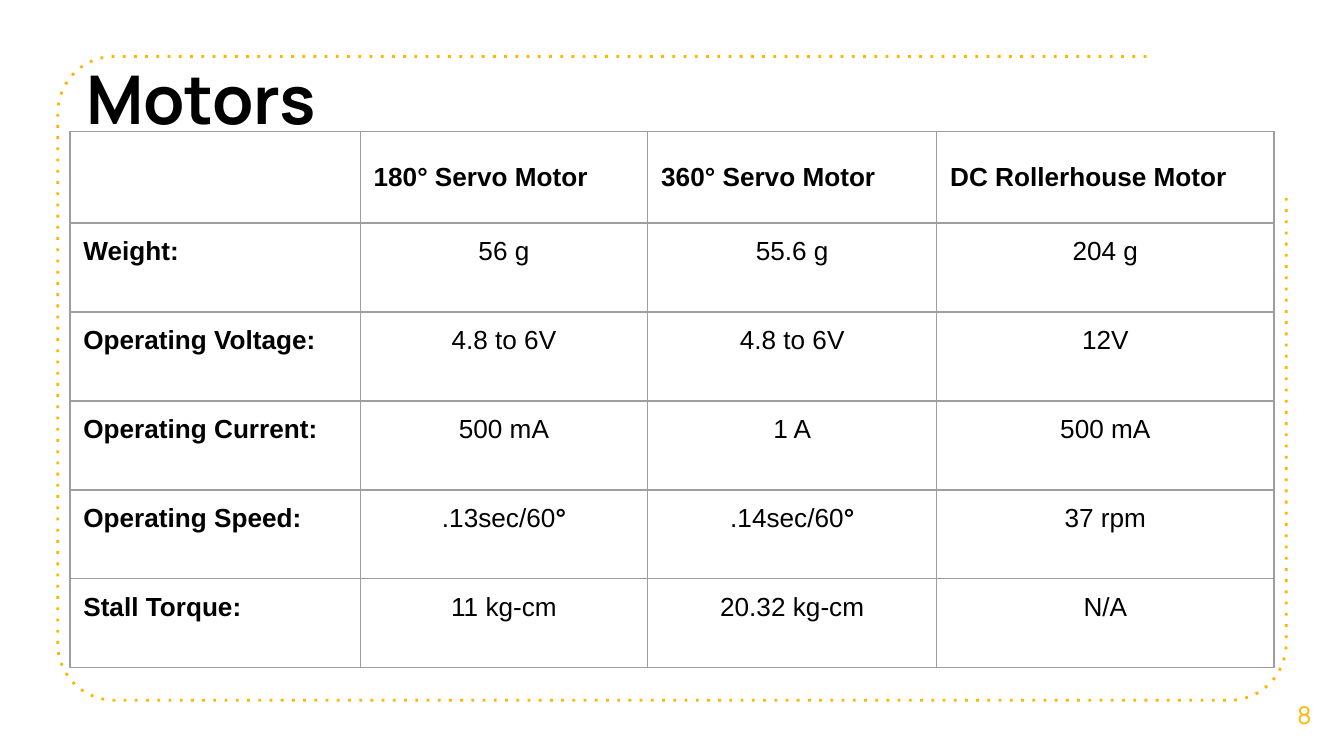
from math import cos, radians, sin

from lxml.etree import SubElement
from pptx import Presentation
from pptx.dml.color import RGBColor
from pptx.enum.text import MSO_ANCHOR, MSO_AUTO_SIZE, PP_ALIGN
from pptx.oxml.ns import qn
from pptx.util import Inches, Pt

BLACK = RGBColor(0x00, 0x00, 0x00)
AMBER = RGBColor(0xFF, 0xB6, 0x00)
GREY = RGBColor(0x9E, 0x9E, 0x9E)

TITLE = "Motors"
PAGE_NUMBER = "8"
ROWS = [
    ("", "180° Servo Motor", "360° Servo Motor", "DC Rollerhouse Motor"),
    ("Weight:", "56 g", "55.6 g", "204 g"),
    ("Operating Voltage:", "4.8 to 6V", "4.8 to 6V", "12V"),
    ("Operating Current:", "500 mA", "1 A", "500 mA"),
    ("Operating Speed:", ".13sec/60°", ".14sec/60°", "37 rpm"),
    ("Stall Torque:", "11 kg-cm", "20.32 kg-cm", "N/A"),
]
COLUMN_WIDTHS = [2.16, 2.14, 2.15, 2.51]
HEADER_HEIGHT, BODY_HEIGHT = 0.68, 3.31
BODY_ROWS = len(ROWS) - 1
ROW_HEIGHTS = [HEADER_HEIGHT] + [BODY_HEIGHT / BODY_ROWS] * BODY_ROWS

FRAME_START, FRAME_END = (8.53, 0.42), (9.57, 1.46)
CORNER_RADIUS = 0.42
CORNERS = [(0.85, 0.84, 270), (0.85, 4.79, 180), (9.15, 4.79, 90)]
CORNER_STEPS = 15


def add_span(para, text, font, size, color, bold=False):
    span = para.add_run()
    span.text = text
    span.font.name = font
    span.font.size = Pt(size)
    span.font.bold = bold
    span.font.color.rgb = color


def set_frame(frame, anchor):
    frame.auto_size = MSO_AUTO_SIZE.NONE
    frame.word_wrap = True
    frame.vertical_anchor = anchor
    frame.margin_left = frame.margin_right = Inches(0.1)
    frame.margin_top = frame.margin_bottom = Inches(0.1)


def add_dotted_frame(page):
    points = []
    for center_x, center_y, start in CORNERS:
        for step in range(CORNER_STEPS + 1):
            angle = radians(start - 90 * step / CORNER_STEPS)
            points.append((center_x + CORNER_RADIUS * cos(angle),
                           center_y + CORNER_RADIUS * sin(angle)))
    points.append(FRAME_END)
    builder = page.shapes.build_freeform(*map(Inches, FRAME_START))
    builder.add_line_segments([(Inches(x), Inches(y)) for x, y in points], close=False)
    outline = builder.convert_to_shape()
    outline.shadow.inherit = False
    outline.fill.background()
    outline.line.color.rgb = AMBER
    outline.line.width = Pt(1.5)
    SubElement(outline.line._get_or_add_ln(), qn("a:prstDash"), val="dot")


def add_title(page):
    title = page.shapes.title
    title.left, title.top = Inches(0.54), Inches(0.33)
    title.width, title.height = Inches(2.03), Inches(0.6)
    set_frame(title.text_frame, MSO_ANCHOR.TOP)
    para = title.text_frame.paragraphs[0]
    para.alignment = PP_ALIGN.LEFT
    add_span(para, TITLE, "Manrope", 36, BLACK, True)


def add_page_number(page):
    box = page.shapes.add_textbox(Inches(9.41), Inches(5.02), Inches(0.59), Inches(0.6))
    set_frame(box.text_frame, MSO_ANCHOR.MIDDLE)
    para = box.text_frame.paragraphs[0]
    para.alignment = PP_ALIGN.CENTER
    add_span(para, PAGE_NUMBER, "Manrope", 13, AMBER)


def add_borders(cell):
    properties = cell._tc.get_or_add_tcPr()
    for side in ("a:lnL", "a:lnR", "a:lnT", "a:lnB"):
        line = SubElement(properties, qn(side), w=str(Pt(0.75)))
        fill = SubElement(line, qn("a:solidFill"))
        SubElement(fill, qn("a:srgbClr"), val=str(GREY))


def fill_cell(cell, text, is_header, is_label):
    add_borders(cell)
    cell.fill.background()
    cell.margin_left = cell.margin_right = Inches(0.1)
    cell.margin_top = cell.margin_bottom = Inches(0.1)
    cell.vertical_anchor = MSO_ANCHOR.MIDDLE if is_header else MSO_ANCHOR.TOP
    para = cell.text_frame.paragraphs[0]
    if is_header or is_label:
        spans = [(text, True)]
    else:
        para.alignment = PP_ALIGN.CENTER
        value, degree, _ = text.partition("°")
        spans = [(value, False), (degree, True)]
    for words, bold in spans:
        if words:
            add_span(para, words, "Arial", 14, BLACK, bold)


def add_motor_table(page):
    table = page.shapes.add_table(
        len(ROWS), len(COLUMN_WIDTHS), Inches(0.52), Inches(0.98),
        Inches(sum(COLUMN_WIDTHS)), Inches(sum(ROW_HEIGHTS))).table
    table.first_row = table.horz_banding = False
    for column, width in zip(table.columns, COLUMN_WIDTHS):
        column.width = Inches(width)
    for row, height in zip(table.rows, ROW_HEIGHTS):
        row.height = Inches(height)
    for r, texts in enumerate(ROWS):
        for c, text in enumerate(texts):
            fill_cell(table.cell(r, c), text, r == 0, c == 0)


def main():
    """Build the motor comparison slide."""
    deck = Presentation()
    deck.slide_width = Inches(10)
    deck.slide_height = deck.slide_width * 9 // 16
    page = deck.slides.add_slide(deck.slide_layouts[5])
    add_dotted_frame(page)
    add_page_number(page)
    add_title(page)
    add_motor_table(page)
    deck.save("out.pptx")


if __name__ == "__main__":
    main()
